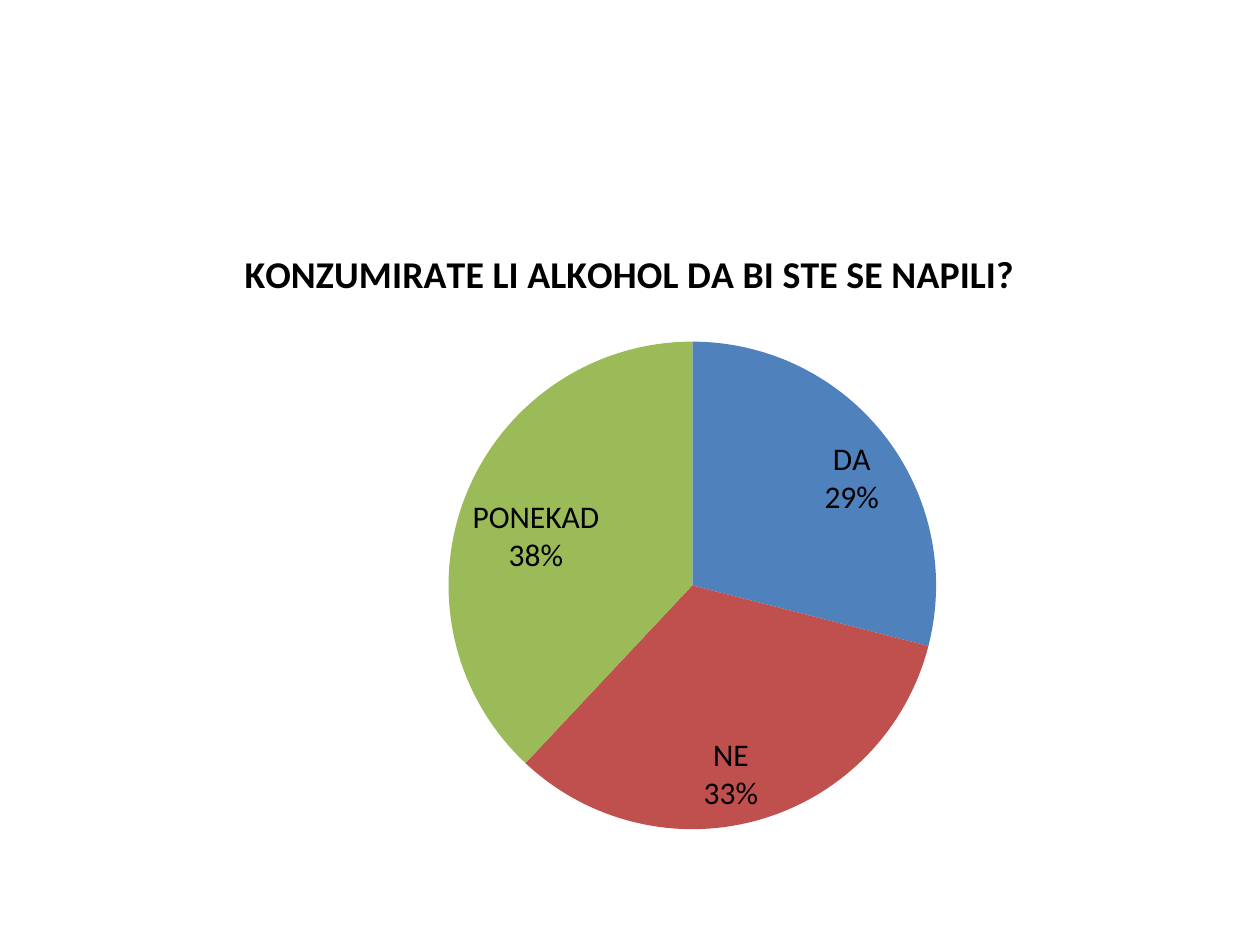
from lxml import etree
from pptx import Presentation
from pptx import util as u
from pptx.chart.data import CategoryChartData
from pptx.dml.color import RGBColor
from pptx.enum import chart as kinds
from pptx.oxml import ns

COLORS = {"DA": "4F81BD", "NE": "C0504D", "PONEKAD": "9BBB59", "text": "000000"}
SHARES = {"DA": 29, "NE": 33, "PONEKAD": 38}
QUESTION = "KONZUMIRATE LI ALKOHOL DA BI STE SE NAPILI?"


def write(frame, text, size=18, bold=False, color="text", font="Calibri"):
    span = frame.paragraphs[0].add_run()
    span.text = text
    span.font.name = font
    span.font.size = u.Pt(size)
    span.font.bold = bold
    span.font.color.rgb = RGBColor.from_string(COLORS[color])


deck = Presentation()
deck.slide_width, deck.slide_height = u.Cm(25.4), u.Cm(19.05)
page = deck.slides.add_slide(deck.slide_layouts[6])

data = CategoryChartData()
data.categories = list(SHARES)
data.add_series(QUESTION, list(SHARES.values()))
pie = page.shapes.add_chart(
    kinds.XL_CHART_TYPE.PIE, u.Cm(1.27), u.Cm(4.45), u.Cm(22.86), u.Cm(12.57), data
).chart
pie.has_legend = False
pie.font.name = "Calibri"
pie.font.size = u.Pt(18)
pie.font.color.rgb = RGBColor.from_string(COLORS["text"])

pie.has_title = True
write(pie.chart_title.text_frame, QUESTION, size=21.6, bold=True)
pie.chart_title.include_in_layout = False

plot = pie.plots[0]
plot.vary_by_categories = True
for index, answer in enumerate(SHARES):
    fill = plot.series[0].points[index].format.fill
    fill.solid()
    fill.fore_color.rgb = RGBColor.from_string(COLORS[answer])

plot.has_data_labels = True
labels = plot.data_labels
labels.show_category_name = True
labels.show_percentage = True
labels.show_value = False
labels.number_format = "0%"
labels.number_format_is_linked = False
labels.position = kinds.XL_LABEL_POSITION.INSIDE_END
separator = etree.Element(ns.qn("c:separator"))
separator.text = "\n"
pie.element.find(".//" + ns.qn("c:showBubbleSize")).addnext(separator)

area = pie.element.find(".//" + ns.qn("c:plotArea"))
for old in area.findall(ns.qn("c:layout")):
    area.remove(old)
layout = etree.Element(ns.qn("c:layout"))
manual = etree.SubElement(layout, ns.qn("c:manualLayout"))
for tag, value in (
    ("layoutTarget", "inner"), ("xMode", "edge"), ("yMode", "edge"),
    ("x", "0.34"), ("y", "0.19"), ("w", "0.43"), ("h", "0.79"),
):
    etree.SubElement(manual, ns.qn("c:" + tag)).set("val", value)
area.insert(0, layout)

deck.save("out.pptx")
